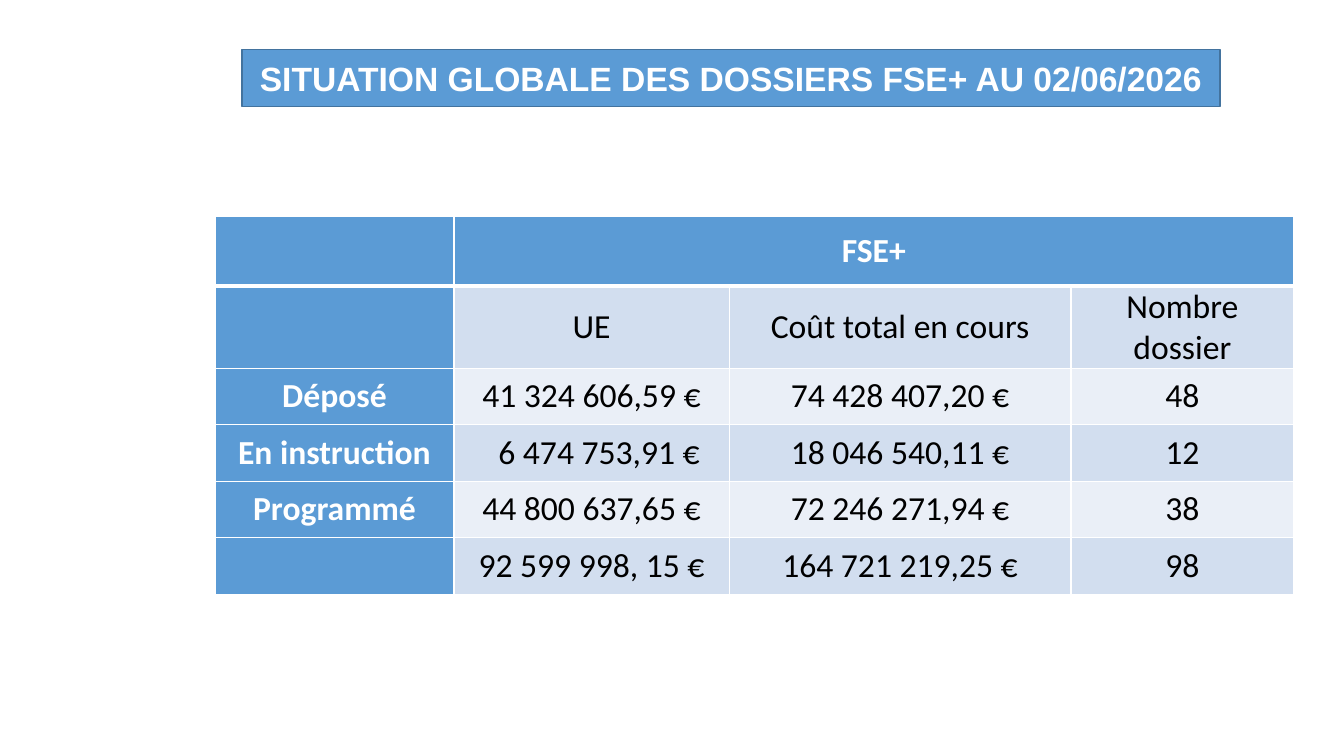
from lxml.etree import SubElement
from pptx import Presentation
from pptx.dml.color import RGBColor
from pptx.enum.text import MSO_ANCHOR, MSO_AUTO_SIZE, PP_ALIGN
from pptx.oxml import parse_xml
from pptx.oxml.ns import nsdecls, qn
from pptx.util import Inches, Pt

BLUE = RGBColor(0x5B, 0x9B, 0xD5)
EDGE = RGBColor(0x43, 0x73, 0x9E)
PALE = RGBColor(0xEA, 0xEF, 0xF7)
MIST = RGBColor(0xD2, 0xDE, 0xEF)
WHITE = RGBColor(0xFF, 0xFF, 0xFF)
BLACK = RGBColor(0x00, 0x00, 0x00)

COLS = [17.78, 20.48, 25.43, 16.58]
ROWS = [9.2] + [7.47] * 5
DATA = [
    ["", "FSE+", "", ""],
    ["", "UE", "Coût total en cours", "Nombre dossier"],
    ["Déposé", "41 324 606,59 €", "74 428 407,20 €", "48"],
    ["En instruction", "6 474 753,91 €", "18 046 540,11 €", "12"],
    ["Programmé", "44 800 637,65 €", "72 246 271,94 €", "38"],
    ["", "92 599 998, 15 €", "164 721 219,25 €", "98"],
]


def write(frame, text, font="Calibri", size=24, color=BLACK, bold=False):
    para = frame.paragraphs[0]
    para.alignment = PP_ALIGN.CENTER
    para.line_spacing = 1.0
    if text:
        run = para.add_run()
        run.text = text
        run.font.name = font
        run.font.size = Pt(size)
        run.font.bold = bold
        run.font.color.rgb = color


class Deck:
    def __init__(self):
        self.show = Presentation()
        self.show.slide_width = Inches(13.33)
        self.show.slide_height = Inches(7.5)
        self.slide = self.show.slides.add_slide(self.show.slide_layouts[5])

    def wide(self, share):
        return int(self.show.slide_width * share / 100)

    def high(self, share):
        return int(self.show.slide_height * share / 100)

    def title(self, text, left, top, width, height):
        box = self.slide.shapes.title
        box.left, box.top = self.wide(left), self.high(top)
        box.width, box.height = self.wide(width), self.high(height)
        shape = f'<a:prstGeom {nsdecls("a")} prst="roundRect"><a:avLst/></a:prstGeom>'
        box._element.spPr.find(qn("a:xfrm")).addnext(parse_xml(shape))
        box.fill.solid()
        box.fill.fore_color.rgb = BLUE
        box.line.color.rgb = EDGE
        box.line.width = Pt(1)
        frame = box.text_frame
        frame.word_wrap = True
        frame.auto_size = MSO_AUTO_SIZE.NONE
        frame.vertical_anchor = MSO_ANCHOR.MIDDLE
        write(frame, text, font="Arial", color=WHITE, bold=True)

    def border(self, cell, row):
        props = cell._tc.get_or_add_tcPr()
        thick = {"B": row == 0, "T": row == 1}
        for side in "LRTB":
            width = Pt(3 if thick.get(side) else 1)
            line = SubElement(props, qn(f"a:ln{side}"), w=str(width))
            fill = SubElement(line, qn("a:solidFill"))
            SubElement(fill, qn("a:srgbClr"), val=str(WHITE))

    def cell(self, cell, text, row, col):
        head = row == 0 or col == 0
        self.border(cell, row)
        cell.fill.solid()
        cell.fill.fore_color.rgb = BLUE if head else MIST if row % 2 else PALE
        cell.margin_left = cell.margin_right = Inches(0.05)
        cell.margin_top = cell.margin_bottom = 0
        cell.vertical_anchor = MSO_ANCHOR.MIDDLE
        write(cell.text_frame, text, color=WHITE if head else BLACK, bold=head)

    def table(self, data, left, top, cols, rows):
        frame = self.slide.shapes.add_table(
            len(rows), len(cols), self.wide(left), self.high(top),
            self.wide(sum(cols)), self.high(sum(rows)))
        table = frame.table
        for col, share in zip(table.columns, cols):
            col.width = self.wide(share)
        for row, share in zip(table.rows, rows):
            row.height = self.high(share)
        for i, line in enumerate(data):
            for j, text in enumerate(line):
                self.cell(table.cell(i, j), text, i, j)
        table.cell(0, 1).merge(table.cell(0, len(cols) - 1))
        return table


def main():
    deck = Deck()
    deck.title("SITUATION GLOBALE DES DOSSIERS FSE+ AU 02/06/2026",
               18, 6.53, 72.77, 7.6)
    table = deck.table(DATA, 16, 28.67, COLS, ROWS)
    table.cell(3, 1).margin_left = Inches(0.2)
    deck.show.save("out.pptx")


if __name__ == "__main__":
    main()
